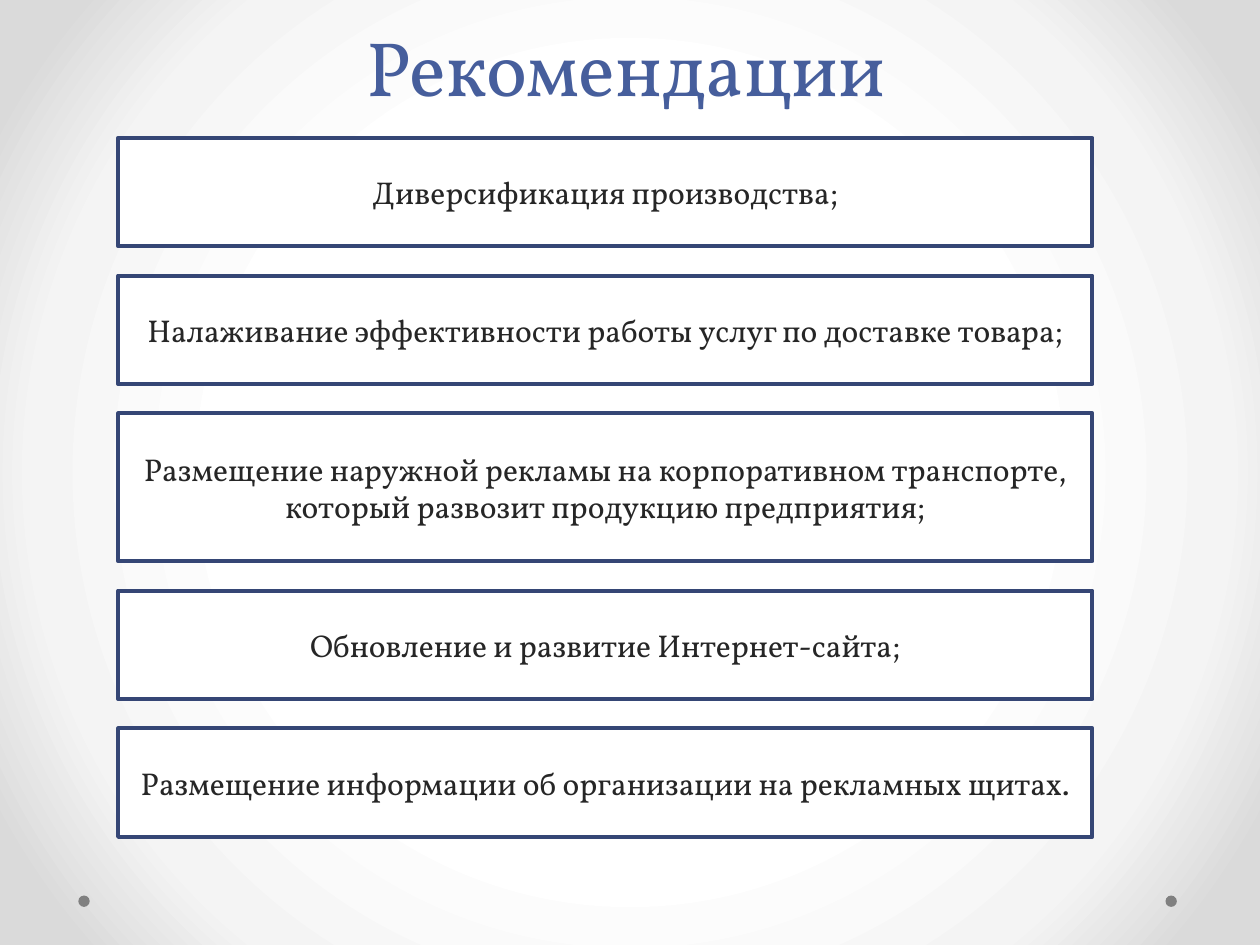
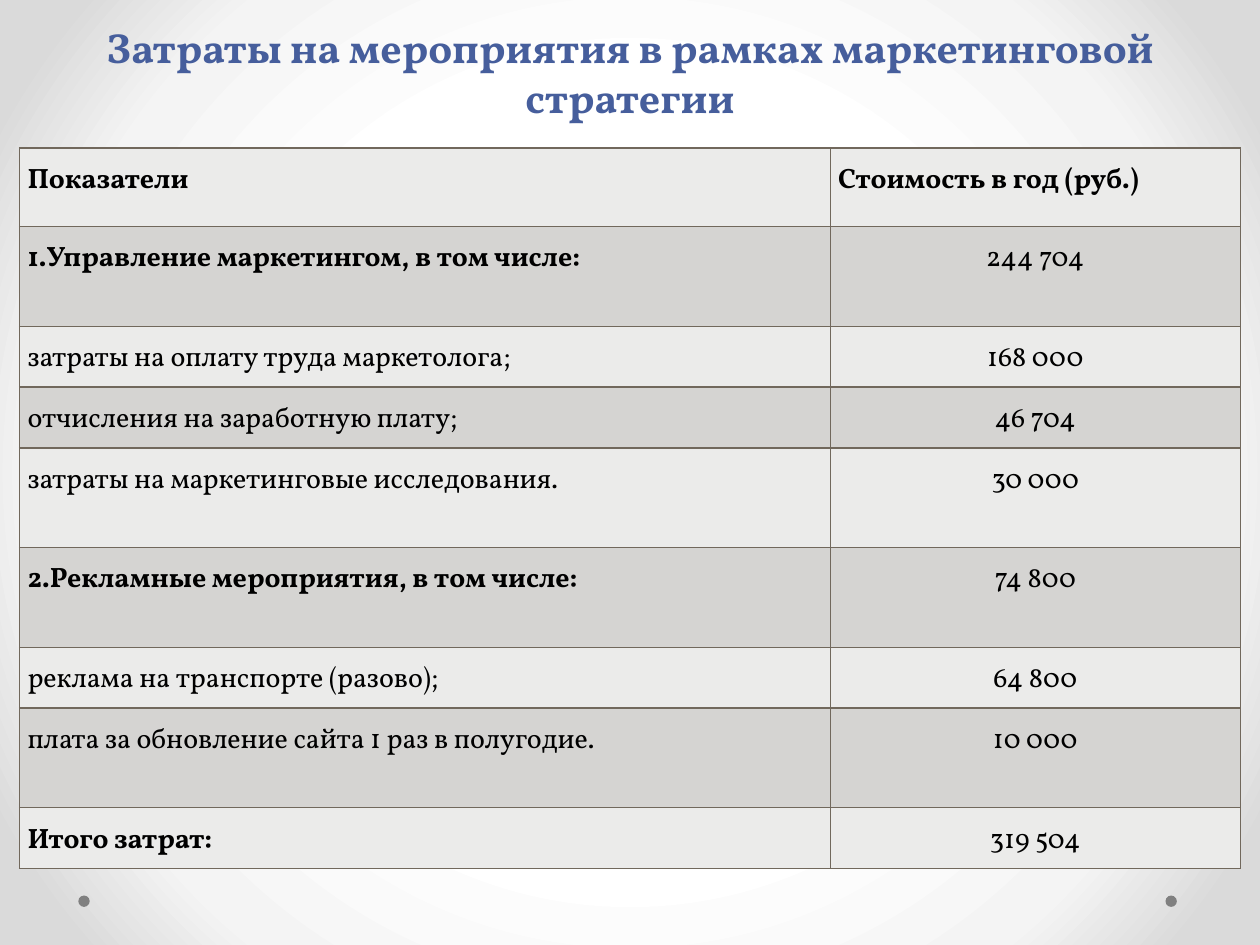
import pptx
import pptx.util
import pptx.dml.color
import pptx.enum.shapes
import pptx.enum.text
import pptx.oxml
import pptx.oxml.ns

Pt = pptx.util.Pt
ALIGN = pptx.enum.text.PP_ALIGN
ANCHOR = pptx.enum.text.MSO_ANCHOR
SHAPE = pptx.enum.shapes.MSO_SHAPE

# Content
ADVICE = [
    "Диверсификация производства;",
    "Налаживание эффективности работы услуг по доставке товара;",
    "Размещение наружной рекламы на корпоративном транспорте, "
    "который развозит продукцию предприятия;",
    "Обновление и развитие Интернет-сайта;",
    "Размещение информации об организации на рекламных щитах.",
]
# Label, cost, row height, bold label
COSTS = [
    ("Показатели", "Стоимость в год (руб.)", 45, True),
    ("1.Управление маркетингом, в том числе:", "244 704", 57, True),
    ("затраты на оплату труда маркетолога;", "168 000", 34.75, False),
    ("отчисления на заработную плату;", "46 704", 34.75, False),
    ("затраты на маркетинговые исследования.", "30 000", 57, False),
    ("2.Рекламные мероприятия, в том числе:", "74 800", 57, True),
    ("реклама на транспорте (разово);", "64 800", 34.75, False),
    ("плата за обновление сайта 1 раз в полугодие.", "10 000", 57, False),
    ("Итого затрат:", "319 504", 34.75, True),
]

# Shared look
FONT = "Vollkorn"
BLUE, NAVY, INK, BLACK, WHITE = "465E9C", "354675", "262626", "000000", "FFFFFF"
DOT, RULE = "808080", "71685C"
BANDS = ["EBEBEA", "D5D4D2"]
GLOW = [(50, WHITE), (76, "F4F4F4"), (92, "DADADA")]
COLS = [463.25, 234.25]


def paint(color, code):
    color.rgb = pptx.dml.color.RGBColor.from_string(code)


def fill(part, code):
    part.fill.solid()
    paint(part.fill.fore_color, code)


def write(frame, text, size, code, align, bold=False):
    par = frame.paragraphs[0]
    par.alignment = align
    run = par.add_run()
    run.text = text
    run.font.name = FONT
    run.font.size = Pt(size)
    run.font.bold = bold
    paint(run.font.color, code)
    return par


def add_form(slide, kind, left, top, width, height, code):
    form = slide.shapes.add_shape(kind, Pt(left), Pt(top), Pt(width), Pt(height))
    form.shadow.inherit = False
    fill(form, code)
    form.line.fill.background()
    return form


def set_glow(master):
    master.background.fill.gradient()
    old = master.element.xpath("p:cSld/p:bg/p:bgPr/a:gradFill")[0]
    stops = "".join(
        f'<a:gs pos="{pos * 1000}"><a:srgbClr val="{code}"/></a:gs>'
        for pos, code in GLOW)
    new = pptx.oxml.parse_xml(
        f'<a:gradFill {pptx.oxml.ns.nsdecls("a")} rotWithShape="1">'
        f'<a:gsLst>{stops}</a:gsLst><a:path path="circle">'
        '<a:fillToRect l="50000" t="50000" r="50000" b="50000"/>'
        '</a:path></a:gradFill>')
    old.getparent().replace(old, new)


def add_page(deck, text, left, height, size, bold=False):
    slide = deck.slides.add_slide(deck.slide_layouts[5])
    for x in (44.75, 666):
        add_form(slide, SHAPE.OVAL, x, 511.75, 6.5, 6.5, DOT)
    title = slide.shapes.title
    title.left, title.top = Pt(left), Pt(11.5)
    title.width, title.height = Pt(648), Pt(height)
    frame = title.text_frame
    frame.word_wrap = True
    frame.auto_size = pptx.enum.text.MSO_AUTO_SIZE.NONE
    frame.vertical_anchor = ANCHOR.BOTTOM
    return slide, write(frame, text, size, BLUE, ALIGN.CENTER, bold)


def add_boxes(slide):
    top, gap = 78.75, 16.75
    for text in ADVICE:
        high = 84.5 if len(text) > 60 else 62
        box = add_form(slide, SHAPE.RECTANGLE, 67.5, top, 556.75, high, WHITE)
        paint(box.line.color, NAVY)
        box.line.width = Pt(2.25)
        box.text_frame.word_wrap = True
        box.text_frame.vertical_anchor = ANCHOR.MIDDLE
        write(box.text_frame, text, 18, INK, ALIGN.CENTER)
        top += high + gap


def add_edges(cell):
    props = cell._tc.get_or_add_tcPr()
    for spot, side in enumerate(("lnL", "lnR", "lnT", "lnB")):
        props.insert(spot, pptx.oxml.parse_xml(
            f'<a:{side} {pptx.oxml.ns.nsdecls("a")} w="{Pt(1)}"><a:solidFill>'
            f'<a:srgbClr val="{RULE}"/></a:solidFill></a:{side}>'))


def add_costs(slide):
    high = sum(row[2] for row in COSTS)
    table = slide.shapes.add_table(
        len(COSTS), len(COLS), Pt(11.25), Pt(84.5), Pt(sum(COLS)), Pt(high)).table
    table.first_row = table.horz_banding = False
    for col, width in zip(table.columns, COLS):
        col.width = Pt(width)
    for r, (label, cost, tall, bold) in enumerate(COSTS):
        table.rows[r].height = Pt(tall)
        head = r == 0
        parts = [(label, ALIGN.JUSTIFY, bold),
                 (cost, ALIGN.JUSTIFY if head else ALIGN.CENTER, head)]
        for c, (text, align, heavy) in enumerate(parts):
            cell = table.cell(r, c)
            cell.margin_left = cell.margin_right = Pt(4.5)
            cell.margin_top = cell.margin_bottom = Pt(4.5)
            fill(cell, BANDS[r % 2])
            par = write(cell.text_frame, text, 16, BLACK, align, heavy)
            par.line_spacing = 1.15
            add_edges(cell)


def main():
    deck = pptx.Presentation()
    deck.slide_width, deck.slide_height = Pt(720), Pt(540)
    set_glow(deck.slide_master)

    # Advice
    slide, par = add_page(deck, "Рекомендации", 34, 56, 44)
    par.line_spacing = Pt(58)
    add_boxes(slide)

    # Costs
    slide, par = add_page(
        deck, "Затраты на мероприятия в рамках маркетинговой стратегии",
        36, 62, 24, True)
    add_costs(slide)
    deck.save("out.pptx")


if __name__ == "__main__":
    main()
